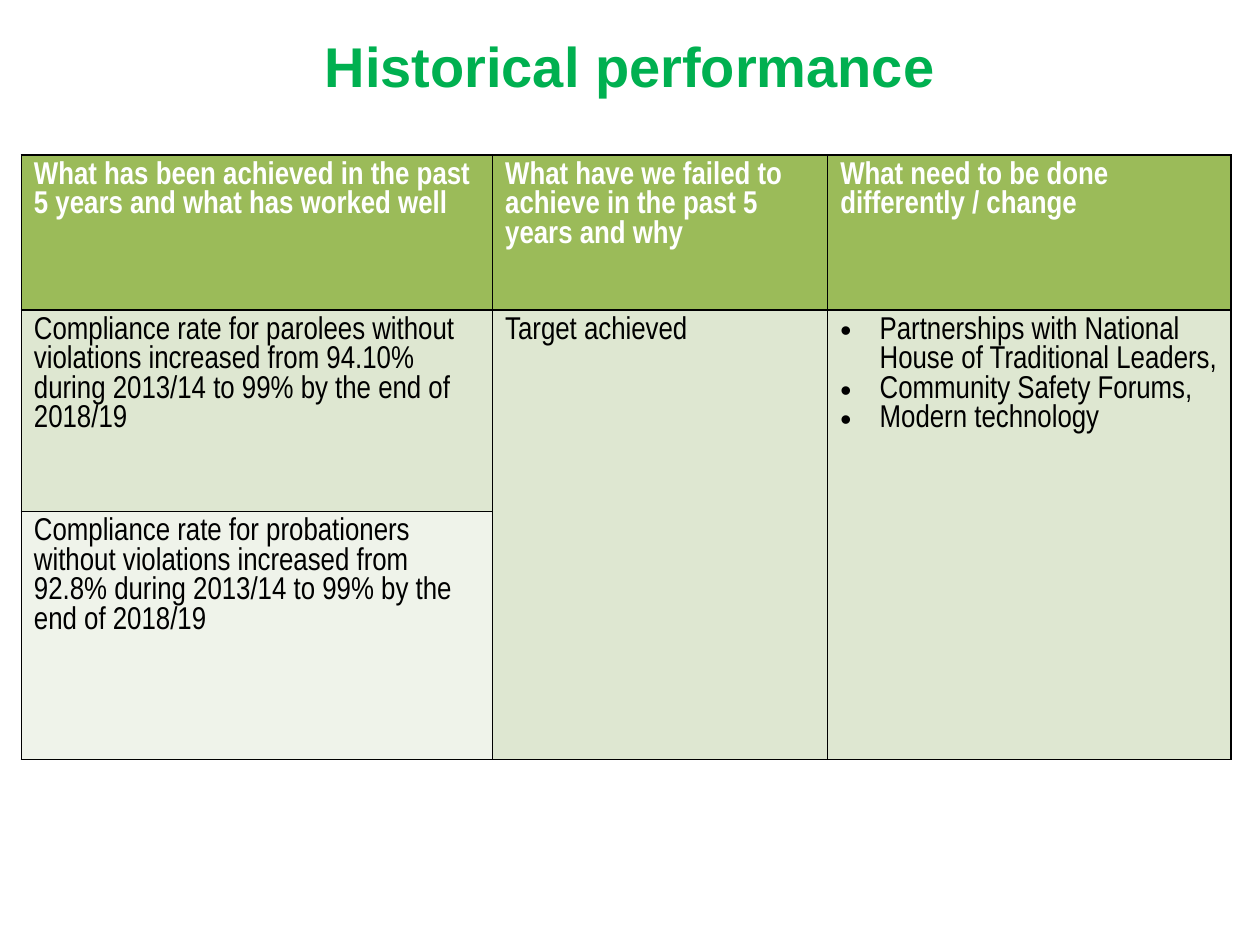
import pptx
import pptx.dml.color
import pptx.enum.text
import pptx.oxml
import pptx.oxml.ns
import pptx.util
from lxml import etree

Pt = pptx.util.Pt
COLORS = {
    "title": "00B050",
    "header": "9BBB59",
    "band_dark": "DEE7D1",
    "band_light": "EFF3EA",
    "border": "000000",
    "body": "000000",
    "header_text": "FFFFFF",
}
HEADINGS = [
    "What has been achieved in the past 5 years and what has worked well",
    "What have we failed to achieve in the past 5 years and why",
    "What need to be done differently / change",
]
ACHIEVEMENTS = [
    "Compliance rate for parolees without violations increased from 94.10% "
    "during 2013/14 to 99% by the end of 2018/19",
    "Compliance rate for probationers without violations increased from 92.8% "
    "during 2013/14 to 99% by the end of 2018/19",
]
FAILURES = "Target achieved"
CHANGES = [
    "Partnerships with National House of Traditional Leaders,",
    "Community Safety Forums,",
    "Modern technology",
]
COLUMN_WIDTHS = [269.3, 191.5, 230.4]
ROW_HEIGHTS = [88.5, 115.2, 141.8]
BULLET_INDENT = 22.5


def rgb(name):
    """Return the named colour."""
    return pptx.dml.color.RGBColor.from_string(COLORS[name])


def add_bullet(paragraph):
    """Give a paragraph a round bullet with a hanging indent."""
    properties = paragraph._p.get_or_add_pPr()
    properties.set("marL", str(Pt(BULLET_INDENT)))
    properties.set("indent", str(-Pt(BULLET_INDENT)))
    font = etree.SubElement(properties, pptx.oxml.ns.qn("a:buFont"))
    font.set("typeface", "Arial")
    bullet = etree.SubElement(properties, pptx.oxml.ns.qn("a:buChar"))
    bullet.set("char", "•")


def write(frame, lines, *, font="Arial Narrow", size=18, color="body",
          bold=False, align=None, bullets=False):
    """Fill a text frame with one formatted paragraph per line."""
    frame.word_wrap = True
    for index, line in enumerate(lines):
        paragraph = frame.add_paragraph() if index else frame.paragraphs[0]
        if bullets:
            add_bullet(paragraph)
        if align is not None:
            paragraph.alignment = align
        run = paragraph.add_run()
        run.text = line
        run.font.name = font
        run.font.size = Pt(size)
        run.font.bold = bold
        run.font.color.rgb = rgb(color)


def style_cell(cell, fill):
    """Draw a thin border around a cell and fill it."""
    properties = cell._tc.get_or_add_tcPr()
    for side in ("lnL", "lnR", "lnT", "lnB"):
        properties.append(pptx.oxml.parse_xml(
            f'<a:{side} {pptx.oxml.ns.nsdecls("a")} w="{Pt(1)}"><a:solidFill>'
            f'<a:srgbClr val="{COLORS["border"]}"/></a:solidFill></a:{side}>'))
    cell.fill.solid()
    cell.fill.fore_color.rgb = rgb(fill)


def place_title(slide, left, top, width, height):
    """Place the slide title in its box."""
    title = slide.shapes.title
    title.left, title.top = Pt(left), Pt(top)
    title.width, title.height = Pt(width), Pt(height)
    write(title.text_frame, ["Historical performance"], font="Arial", size=32,
          color="title", bold=True, align=pptx.enum.text.PP_ALIGN.CENTER)


def place_performance_table(slide, left, top):
    """Place the table of achievements, failures and changes."""
    table = slide.shapes.add_table(
        len(ROW_HEIGHTS), len(COLUMN_WIDTHS), Pt(left), Pt(top),
        Pt(sum(COLUMN_WIDTHS)), Pt(sum(ROW_HEIGHTS))).table
    for column, width in zip(table.columns, COLUMN_WIDTHS):
        column.width = Pt(width)
    for row, height in zip(table.rows, ROW_HEIGHTS):
        row.height = Pt(height)
    for row, fills in enumerate((["header"] * 3, ["band_dark"] * 3,
                                 ["band_light", "band_dark", "band_dark"])):
        for column, fill in enumerate(fills):
            style_cell(table.cell(row, column), fill)
    for column in (1, 2):
        table.cell(1, column).merge(table.cell(2, column))

    for column, heading in enumerate(HEADINGS):
        write(table.cell(0, column).text_frame, [heading],
              color="header_text", bold=True)
    for row, achievement in enumerate(ACHIEVEMENTS, start=1):
        write(table.cell(row, 0).text_frame, [achievement])
    write(table.cell(1, 1).text_frame, [FAILURES])
    write(table.cell(1, 2).text_frame, CHANGES, bullets=True)


def main():
    """Build and save the slide."""
    deck = pptx.Presentation()
    deck.slide_width, deck.slide_height = Pt(720), Pt(540)
    slide = deck.slides.add_slide(deck.slide_layouts.get_by_name("Title Only"))
    place_performance_table(slide, 12.2, 88.6)
    place_title(slide, 36, 14.4, 648, 46)
    deck.save("out.pptx")


if __name__ == "__main__":
    main()
